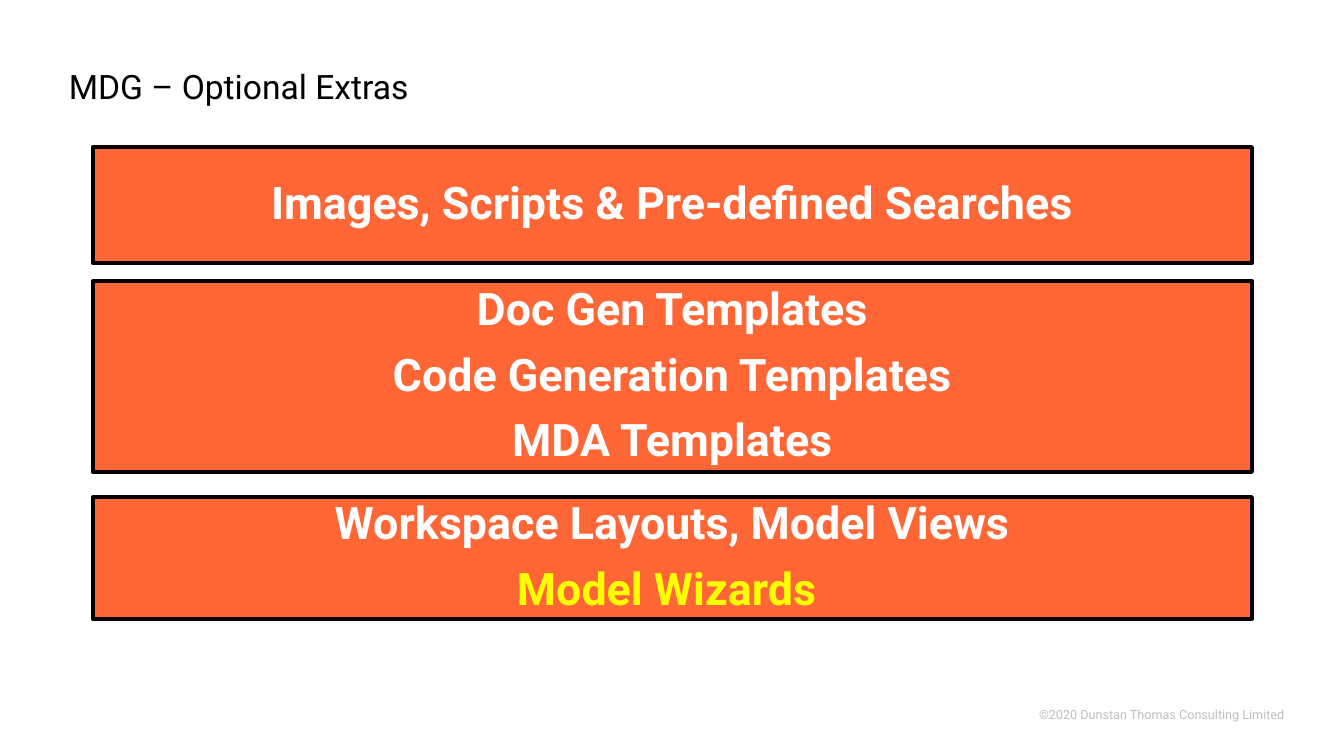
"""Build the slide listing the optional extras of an MDG."""
from dataclasses import dataclass

import pptx
import pptx.dml.color
import pptx.enum.shapes
import pptx.enum.text
import pptx.util
from pptx.enum.text import MSO_ANCHOR, PP_ALIGN
from pptx.util import Cm

FONT = "Roboto"
COLORS = {
    "orange": "FF6635",
    "black": "000000",
    "white": "FFFFFF",
    "yellow": "FFFF00",
    "grey": "BFBFBF",
}
PANEL_LEFT, PANEL_WIDTH, PANEL_INSET = 2.34, 29.21, 0.48


@dataclass
class Line:
    text: str
    color: str = "white"


@dataclass
class Panel:
    top: float
    height: float
    lines: list[Line]


PANELS = [
    Panel(3.71, 2.92, [Line("Images, Scripts & Pre-defined Searches")]),
    Panel(7.09, 4.8, [
        Line("Doc Gen Templates"),
        Line("Code Generation Templates"),
        Line("MDA Templates"),
    ]),
    Panel(12.53, 3.06, [
        Line("Workspace Layouts, Model Views"),
        Line("Model Wizards ", "yellow"),
    ]),
]


def rgb(name: str) -> pptx.dml.color.RGBColor:
    return pptx.dml.color.RGBColor.from_string(COLORS[name])


def format_runs(p, size: float, color: str, bold: bool = False) -> None:
    for r in p.runs:
        r.font.name = FONT
        r.font.size = pptx.util.Pt(size)
        r.font.bold = bold
        r.font.color.rgb = rgb(color)


def add_title(s, text: str) -> None:
    title = s.shapes.title
    title.left, title.top = Cm(1.48), Cm(1.57)
    title.width, title.height = Cm(30.63), Cm(1.3)
    tf = title.text_frame
    tf.text = text
    tf.vertical_anchor = MSO_ANCHOR.MIDDLE
    p = tf.paragraphs[0]
    p.alignment = PP_ALIGN.LEFT
    p.line_spacing = 0.9
    format_runs(p, 24, "black")


def add_panel(s, panel: Panel) -> None:
    sp = s.shapes.add_shape(
        pptx.enum.shapes.MSO_SHAPE.RECTANGLE,
        Cm(PANEL_LEFT), Cm(panel.top), Cm(PANEL_WIDTH), Cm(panel.height),
    )
    sp.shadow.inherit = False
    sp.fill.solid()
    sp.fill.fore_color.rgb = rgb("orange")
    sp.line.color.rgb = rgb("black")
    sp.line.width = pptx.util.Pt(3)
    tf = sp.text_frame
    tf.word_wrap = True
    tf.vertical_anchor = MSO_ANCHOR.MIDDLE
    tf.margin_left = tf.margin_right = Cm(PANEL_INSET)
    tf.margin_top = tf.margin_bottom = Cm(PANEL_INSET)
    tf.text = "\n".join(line.text for line in panel.lines)
    for p, line in zip(tf.paragraphs, panel.lines):
        p.alignment = PP_ALIGN.CENTER
        p.line_spacing = 0.9
        p.space_after = pptx.util.Pt(12.3)
        format_runs(p, 32, line.color, bold=True)


def add_copyright(s, text: str) -> None:
    sp = s.shapes.add_textbox(Cm(19.69), Cm(17.68), Cm(12.67), Cm(0.64))
    tf = sp.text_frame
    tf.word_wrap = True
    tf.margin_left = tf.margin_right = 0
    tf.text = text
    p = tf.paragraphs[0]
    p.alignment = PP_ALIGN.RIGHT
    format_runs(p, 9, "grey")


def main() -> None:
    prs = pptx.Presentation()
    prs.slide_width, prs.slide_height = Cm(33.87), Cm(19.05)
    s = prs.slides.add_slide(prs.slide_layouts.get_by_name("Title Only"))
    add_copyright(s, "©2020 Dunstan Thomas Consulting Limited")
    add_title(s, "MDG – Optional Extras")
    for panel in PANELS:
        add_panel(s, panel)
    prs.save("out.pptx")


if __name__ == "__main__":
    main()
